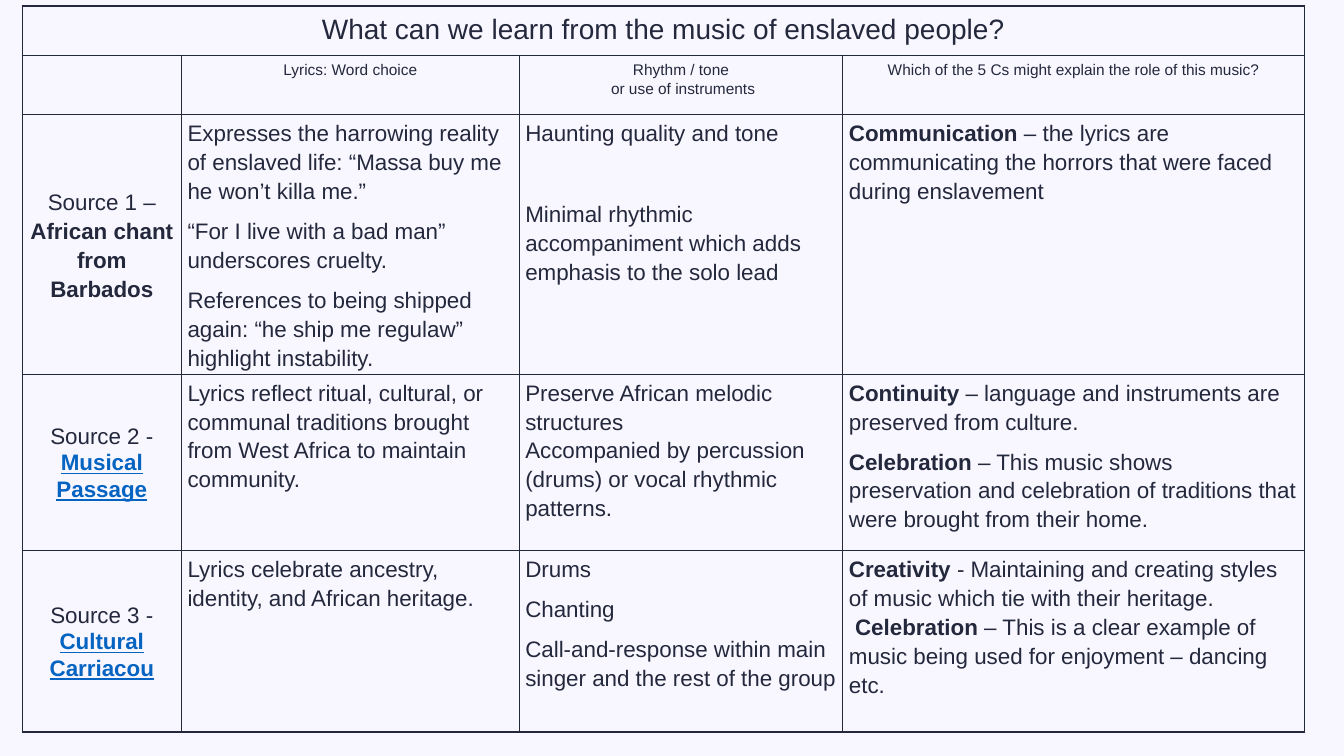
from dataclasses import dataclass

from lxml import etree
from pptx import Presentation
from pptx import util as u
from pptx.dml.color import RGBColor
from pptx.enum import text
from pptx.oxml import ns

PX = 9144  # 100 px to the inch
INK, LINK, PAPER = "24283C", "0563C1", "F8F7FF"
FONT = "Arial"
COLUMNS = (158, 335, 321, 458)
ROWS = (49, 59, 220, 175, 180)
LEFT, TOP = 22, 6


@dataclass(frozen=True)
class Span:
    words: str
    bold: bool = False
    link: bool = False


@dataclass(frozen=True)
class Para:
    spans: tuple[Span, ...]
    before: int = 0


@dataclass(frozen=True)
class Entry:
    paras: tuple[Para, ...]
    size: int = 16
    centred: bool = False
    middle: bool = False
    leading: float = 1.16


def px(length: int) -> int:
    return length * PX


def rgb(colour: str) -> RGBColor:
    return RGBColor.from_string(colour)


def plain(*paragraphs: str) -> Entry:
    return Entry(tuple(Para((Span(words),)) for words in paragraphs))


def heading(words: str, size: int = 11) -> Entry:
    return Entry((Para((Span(words),)),), size, centred=True)


def source(label: str, name: str, link: bool = True) -> Entry:
    spans = (Span(label), Span(name, bold=True, link=link))
    return Entry((Para(spans),), centred=True, middle=True,
                 leading=1.07 if link else 1.16)


def reasons(*paragraphs: tuple[str, ...]) -> Entry:
    """Paragraphs whose spans alternate between bold and regular."""
    return Entry(tuple(
        Para(tuple(Span(words, bold=i % 2 == 0) for i, words in enumerate(spans)))
        for spans in paragraphs))


GRID: tuple[tuple[Entry, ...], ...] = (
    (heading("What can we learn from the music of enslaved people?", 20),),
    (
        Entry(()),
        heading("Lyrics: Word choice"),
        heading("Rhythm / tone\n or use of instruments"),
        heading("Which of the 5 Cs might explain the role of this music?"),
    ),
    (
        source("Source 1 – ", "African chant from Barbados", link=False),
        plain("Expresses the harrowing reality of enslaved life: “Massa buy me he won’t killa me.”",
              "“For I live with a bad man” underscores cruelty.",
              "References to being shipped again: “he ship me regulaw” highlight instability."),
        Entry((Para((Span("Haunting quality and tone"),)),
               Para((Span("Minimal rhythmic accompaniment which adds emphasis to the solo lead"),),
                    before=29))),
        reasons(("Communication",
                 " – the lyrics are communicating the horrors that were faced during enslavement")),
    ),
    (
        source("Source 2 - ", "Musical Passage"),
        plain("Lyrics reflect ritual, cultural, or communal traditions brought from "
              "West Africa to maintain community."),
        plain("Preserve African melodic structures \nAccompanied by percussion (drums) "
              "or vocal rhythmic patterns."),
        reasons(("Continuity", " – language and instruments are preserved from culture."),
                ("Celebration", " – This music shows preservation and celebration of "
                 "traditions that were brought from their home.")),
    ),
    (
        source("Source 3 - ", "Cultural Carriacou"),
        plain("Lyrics celebrate ancestry, identity, and African heritage."),
        plain("Drums", "Chanting",
              "Call‑and‑response within main singer and the rest of the group"),
        reasons(("Creativity ",
                 "- Maintaining and creating styles of music which tie with their heritage.\n ",
                 "Celebration",
                 " – This is a clear example of music being used for enjoyment – dancing etc.")),
    ),
)


def frame_cell(cell) -> None:
    """Give a cell thin ink borders, small margins and no fill."""
    properties = cell._tc.get_or_add_tcPr()
    for side in ("L", "R", "T", "B"):
        line = etree.SubElement(properties, ns.qn(f"a:ln{side}"), w=str(u.Pt(1)))
        fill = etree.SubElement(line, ns.qn("a:solidFill"))
        etree.SubElement(fill, ns.qn("a:srgbClr"), val=INK)
    cell.fill.background()
    cell.margin_left = cell.margin_right = px(6)
    cell.margin_top = cell.margin_bottom = px(3)


def write_span(paragraph, span: Span, size: int) -> None:
    for i, line in enumerate(span.words.split("\n")):
        if i:
            paragraph.add_line_break()
        run = paragraph.add_run()
        run.text = line
        run.font.name = FONT
        run.font.size = u.Pt(size)
        run.font.bold = span.bold
        run.font.underline = span.link
        run.font.color.rgb = rgb(LINK if span.link else INK)


def write_entry(cell, entry: Entry) -> None:
    if entry.middle:
        cell.vertical_anchor = text.MSO_ANCHOR.MIDDLE
    frame = cell.text_frame
    for i, para in enumerate(entry.paras):
        paragraph = frame.add_paragraph() if i else frame.paragraphs[0]
        paragraph.alignment = text.PP_ALIGN.CENTER if entry.centred else text.PP_ALIGN.LEFT
        paragraph.line_spacing = entry.leading
        paragraph.space_before = u.Pt(para.before)
        paragraph.space_after = u.Pt(8)
        paragraph.font.size = u.Pt(entry.size)
        for span in para.spans:
            write_span(paragraph, span, entry.size)


def main() -> None:
    deck = Presentation()
    deck.slide_width, deck.slide_height = u.Inches(13.33), u.Inches(7.5)
    slide = deck.slides.add_slide(deck.slide_layouts[6])
    slide.background.fill.solid()
    slide.background.fill.fore_color.rgb = rgb(PAPER)

    music = slide.shapes.add_table(len(ROWS), len(COLUMNS), px(LEFT), px(TOP),
                                   px(sum(COLUMNS)), px(sum(ROWS))).table
    music.first_row = music.horz_banding = False
    for column, width in zip(music.columns, COLUMNS):
        column.width = px(width)
    for row, height in zip(music.rows, ROWS):
        row.height = px(height)
    music.cell(0, 0).merge(music.cell(0, len(COLUMNS) - 1))
    for cell in music.iter_cells():
        frame_cell(cell)
    for r, entries in enumerate(GRID):
        for c, entry in enumerate(entries):
            write_entry(music.cell(r, c), entry)
    deck.save("out.pptx")


if __name__ == "__main__":
    main()
